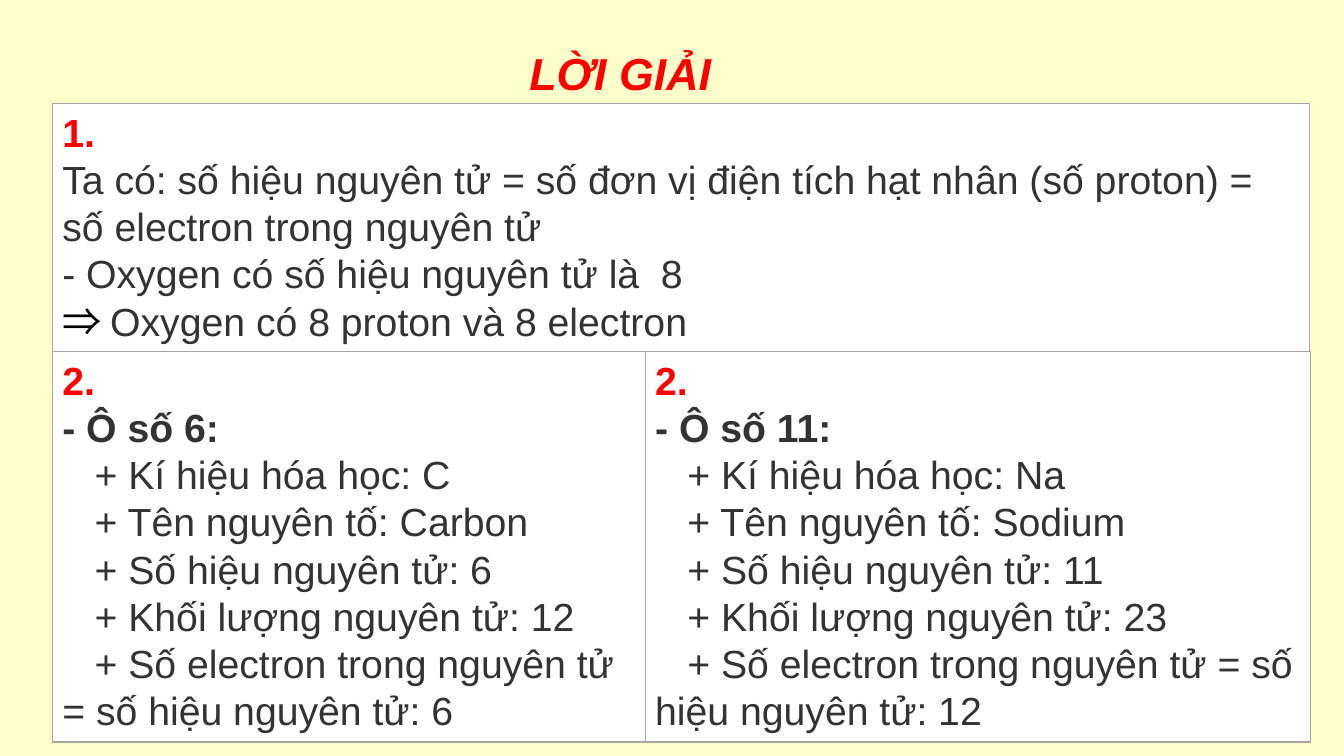
import pptx
import pptx.util
import pptx.dml.color
import pptx.enum.shapes
import pptx.enum.text

Inches = pptx.util.Inches
Pt = pptx.util.Pt


def color(value):
    return pptx.dml.color.RGBColor.from_string(value)


def add_run(p, text, size=28, font="Arial", fill="333333", bold=False, italic=False):
    r = p.add_run()
    r.text = text
    r.font.size = Pt(size)
    r.font.name = font
    r.font.bold = bold
    r.font.italic = italic
    r.font.color.rgb = color(fill)


class SolutionSlide:
    background = "FFFFCC"
    accent = "FF0000"
    panel = "FFFFFF"
    border = "A5A5A5"
    item_indent = Inches(0.32)
    line_pitch = Pt(33.6)

    def __init__(self, prs):
        self.s = prs.slides.add_slide(prs.slide_layouts[5])
        self.s.background.fill.solid()
        self.s.background.fill.fore_color.rgb = color(self.background)

    def title(self, text, left, top, width, height):
        sp = self.s.shapes.title
        sp.left, sp.top = Inches(left), Inches(top)
        sp.width, sp.height = Inches(width), Inches(height)
        tf = sp.text_frame
        tf.word_wrap = True
        tf.auto_size = pptx.enum.text.MSO_AUTO_SIZE.NONE
        tf.vertical_anchor = pptx.enum.text.MSO_ANCHOR.TOP
        p = tf.paragraphs[0]
        p.alignment = pptx.enum.text.PP_ALIGN.LEFT
        add_run(p, text, size=32, fill=self.accent, bold=True, italic=True)

    def box(self, number, left, top, width, height):
        sp = self.s.shapes.add_shape(
            pptx.enum.shapes.MSO_SHAPE.RECTANGLE,
            Inches(left), Inches(top), Inches(width), Inches(height))
        sp.shadow.inherit = False
        sp.fill.solid()
        sp.fill.fore_color.rgb = color(self.panel)
        sp.line.color.rgb = color(self.border)
        sp.line.width = Pt(1)
        tf = sp.text_frame
        tf.word_wrap = True
        tf.vertical_anchor = pptx.enum.text.MSO_ANCHOR.TOP
        add_run(self.format(tf.paragraphs[0]), number, fill=self.accent, bold=True)
        return tf

    def format(self, p):
        p.alignment = pptx.enum.text.PP_ALIGN.LEFT
        p.line_spacing = self.line_pitch
        return p

    def line(self, tf, text, bold=False, arrow=False, item=False):
        p = self.format(tf.add_paragraph())
        if item:
            pPr = p._p.get_or_add_pPr()
            pPr.set("marL", "0")
            pPr.set("indent", str(self.item_indent))
        if arrow:
            add_run(p, "⇒ ", font="Noto Sans CJK SC", fill="000000")
        add_run(p, text, bold=bold)


def main():
    prs = pptx.Presentation()
    prs.slide_width, prs.slide_height = Inches(13.33), Inches(7.5)
    slide = SolutionSlide(prs)
    slide.title("LỜI GIẢI", 5.15, 0.4, 2.5, 0.64)

    # Question 1
    tf = slide.box("1.", 0.52, 1.03, 12.47, 2.46)
    slide.line(tf, "Ta có: số hiệu nguyên tử = số đơn vị điện tích hạt nhân "
                   "(số proton) = số electron trong nguyên tử")
    slide.line(tf, "- Oxygen có số hiệu nguyên tử là  8")
    slide.line(tf, "Oxygen có 8 proton và 8 electron", arrow=True)

    # Question 2: one box per element
    elements = [
        (0.52, 5.91, 6, "C", "Carbon", 12, 6),
        (6.4, 6.6, 11, "Na", "Sodium", 23, 12),
    ]
    for left, width, number, symbol, name, mass, electrons in elements:
        tf = slide.box("2.", left, 3.49, width, 3.87)
        slide.line(tf, f"- Ô số {number}:", bold=True)
        for item in (f"Kí hiệu hóa học: {symbol}",
                     f"Tên nguyên tố: {name}",
                     f"Số hiệu nguyên tử: {number}",
                     f"Khối lượng nguyên tử: {mass}",
                     f"Số electron trong nguyên tử = số hiệu nguyên tử: {electrons}"):
            slide.line(tf, f"+ {item}", item=True)

    prs.save("out.pptx")


if __name__ == "__main__":
    main()
